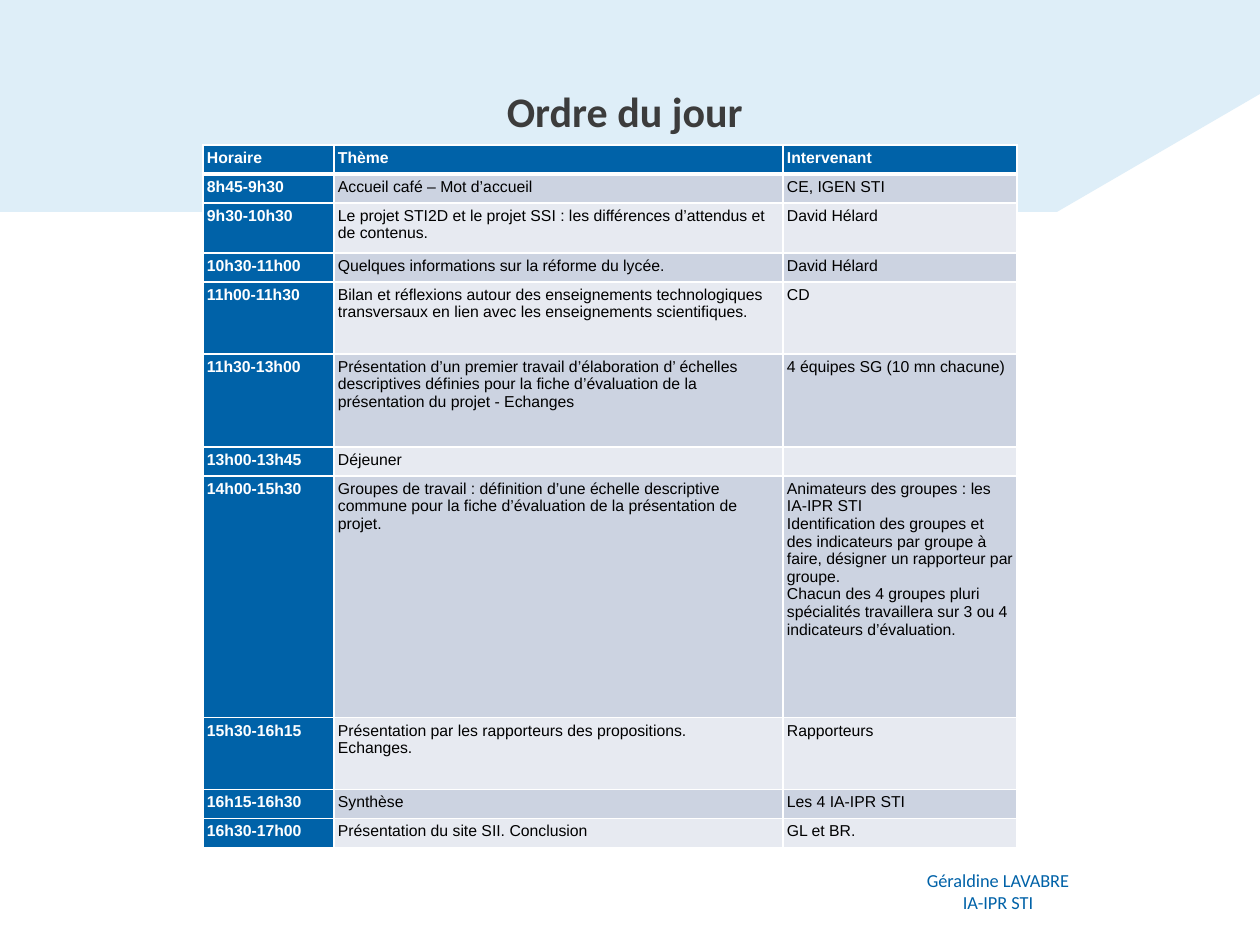
"""Build the agenda slide of the training day."""
import pptx
import pptx.dml.color
import pptx.enum.text
import pptx.oxml
import pptx.oxml.ns
import pptx.util

SCALE = 914400 / 126
RGBColor = pptx.dml.color.RGBColor
BLUE = RGBColor(0x00, 0x62, 0xA8)
PALE_BLUE = RGBColor(0xDE, 0xEE, 0xF8)
DARK_GREY = RGBColor(0x3C, 0x3C, 0x3C)
BLACK = RGBColor(0x00, 0x00, 0x00)
WHITE = RGBColor(0xFF, 0xFF, 0xFF)
BANDS = [RGBColor(0xCC, 0xD3, 0xE1), RGBColor(0xE7, 0xEA, 0xF1)]

CENTER = pptx.enum.text.PP_ALIGN.CENTER
LEFT = pptx.enum.text.PP_ALIGN.LEFT
TOP = pptx.enum.text.MSO_ANCHOR.TOP
MIDDLE = pptx.enum.text.MSO_ANCHOR.MIDDLE

TITLE_FONT = {"name": "Calibri", "size": pptx.util.Pt(24), "bold": True}
AUTHOR_FONT = {"name": "Calibri", "size": pptx.util.Pt(10.5), "bold": False}
HEAD_FONT = {"name": "Arial", "size": pptx.util.Pt(9), "bold": True}
BODY_FONT = {**HEAD_FONT, "bold": False}

COLUMN_WIDTHS = [131, 449, 234]
ROW_HEIGHTS = [29, 29, 50, 29, 72, 93, 29, 242, 72, 29, 29]
AGENDA = [
    ("Horaire", "Thème", "Intervenant"),
    ("8h45-9h30", "Accueil café – Mot d’accueil", "CE, IGEN STI"),
    ("9h30-10h30",
     "Le projet STI2D et le projet SSI : les différences d’attendus et de contenus.",
     "David Hélard"),
    ("10h30-11h00", "Quelques informations sur la réforme du lycée.", "David Hélard"),
    ("11h00-11h30",
     "Bilan et réflexions autour des enseignements technologiques transversaux "
     "en lien avec les enseignements scientifiques.", "CD"),
    ("11h30-13h00",
     "Présentation d’un premier travail d’élaboration d’ échelles descriptives "
     "définies pour la fiche d’évaluation de la présentation du projet - Echanges",
     "4 équipes SG (10 mn chacune)"),
    ("13h00-13h45", "Déjeuner", ""),
    ("14h00-15h30",
     "Groupes de travail : définition d’une échelle descriptive commune pour la "
     "fiche d’évaluation de la présentation de projet.",
     "Animateurs des groupes : les IA-IPR STI\n"
     "Identification des groupes et des indicateurs par groupe à faire, "
     "désigner un rapporteur par groupe.\n"
     "Chacun des 4 groupes pluri spécialités travaillera sur 3 ou 4 "
     "indicateurs d’évaluation."),
    ("15h30-16h15",
     "Présentation par les rapporteurs des propositions.\nEchanges.", "Rapporteurs"),
    ("16h15-16h30", "Synthèse", "Les 4 IA-IPR STI"),
    ("16h30-17h00", "Présentation du site SII. Conclusion", "GL et BR."),
]


def px(length):
    """Turn a length in px into EMU."""
    return pptx.util.Emu(round(length * SCALE))


def apply(target, values):
    """Set each named value as an attribute of the target."""
    for name, value in values.items():
        setattr(target, name, value)


def margins(prefix, size):
    """Return equal margin values for the four sides."""
    return {f"{prefix}_{side}": px(size) for side in ("left", "top", "right", "bottom")}


def write(frame, text, font, color, align):
    """Write one paragraph for each line of the text."""
    for index, line in enumerate(text.split("\n")):
        para = frame.add_paragraph() if index else frame.paragraphs[0]
        para.alignment = align
        if line:
            span = para.add_run()
            span.text = line
            apply(span.font, font)
            span.font.color.rgb = color
        else:
            size = str(round(font["size"].pt * 100))
            end = pptx.oxml.ns.qn("a:endParaRPr")
            para._p.append(para._p.makeelement(end, {"sz": size}))


def add_banner(page):
    """Draw the slanted band behind everything else."""
    builder = page.shapes.build_freeform(0, 0, scale=SCALE)
    builder.add_line_segments([(0, 212), (1057, 212), (1260, 94), (1260, 0)], close=True)
    banner = builder.convert_to_shape()
    banner.shadow.inherit = False
    banner.fill.solid()
    banner.fill.fore_color.rgb = PALE_BLUE
    banner.line.fill.background()
    banner.element.getparent().insert(2, banner.element)


def fill_box(box, area, text, font, color, anchor):
    """Place a text shape and fill it with centred text."""
    apply(box, dict(zip(("left", "top", "width", "height"), map(px, area))))
    apply(box.text_frame, {"word_wrap": True, "vertical_anchor": anchor,
                           "auto_size": pptx.enum.text.MSO_AUTO_SIZE.NONE,
                           **margins("margin", 0)})
    write(box.text_frame, text, font, color, CENTER)


def set_borders(cell, widths):
    """Give a cell white borders, with a width in points for each side."""
    namespace = pptx.oxml.ns.nsdecls("a")
    for side, width in widths.items():
        cell._tc.get_or_add_tcPr().append(pptx.oxml.parse_xml(
            f'<a:ln{side} {namespace} w="{pptx.util.Pt(width)}"><a:solidFill>'
            f'<a:srgbClr val="{WHITE}"/></a:solidFill></a:ln{side}>'))


def add_agenda(page):
    """Add the agenda table with its heading row, time column and bands."""
    frame = page.shapes.add_table(
        len(AGENDA), len(COLUMN_WIDTHS), px(203), px(145),
        px(sum(COLUMN_WIDTHS)), px(sum(ROW_HEIGHTS)))
    table = frame.table
    for column, width in zip(table.columns, COLUMN_WIDTHS):
        column.width = px(width)
    for row, (height, texts) in enumerate(zip(ROW_HEIGHTS, AGENDA)):
        table.rows[row].height = px(height)
        for column, text in enumerate(texts):
            cell = table.cell(row, column)
            heading = row == 0 or column == 0
            apply(cell, {"vertical_anchor": TOP, **margins("margin", 4)})
            set_borders(cell, {"L": 1, "R": 1, "T": 3 if row == 1 else 1,
                               "B": 3 if row == 0 else 1})
            cell.fill.solid()
            cell.fill.fore_color.rgb = BLUE if heading else BANDS[(row - 1) % 2]
            write(cell.text_frame, text, HEAD_FONT if heading else BODY_FONT,
                  WHITE if heading else BLACK, LEFT)


def main():
    """Build and save the deck."""
    deck = pptx.Presentation()
    apply(deck, {"slide_width": px(1260), "slide_height": px(945)})
    page = deck.slides.add_slide(deck.slide_layouts[5])
    add_banner(page)
    fill_box(page.shapes.title, (94, 18, 1071, 186), "Ordre du jour ",
             TITLE_FONT, DARK_GREY, MIDDLE)
    fill_box(page.shapes.add_textbox(0, 0, 0, 0), (819, 869, 358, 49),
             "Géraldine LAVABRE\nIA-IPR STI", AUTHOR_FONT, BLUE, TOP)
    add_agenda(page)
    deck.save("out.pptx")


if __name__ == "__main__":
    main()
